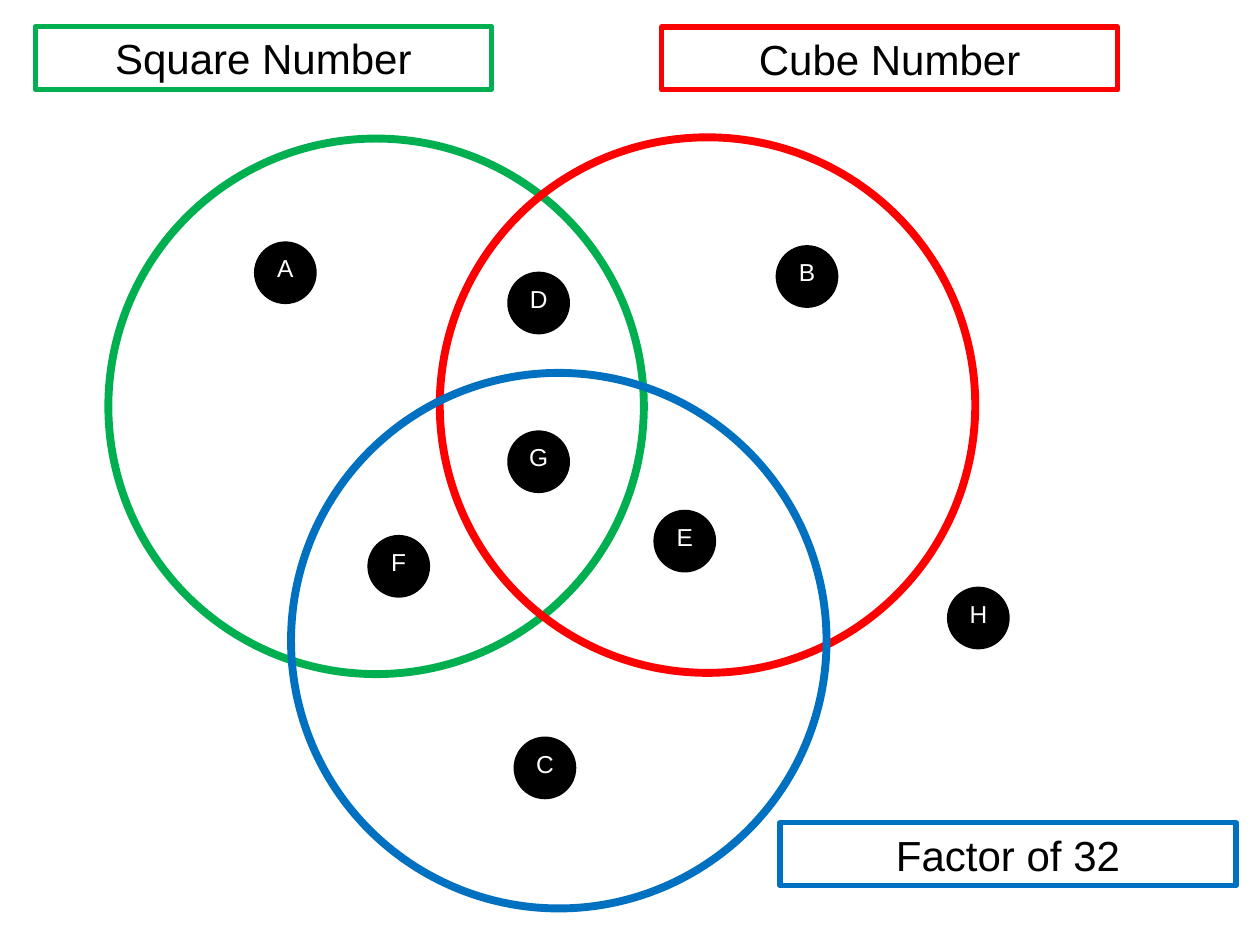
from dataclasses import dataclass

from pptx import Presentation
from pptx.dml.color import RGBColor
from pptx.enum.shapes import MSO_SHAPE
from pptx.enum.text import MSO_ANCHOR, MSO_AUTO_SIZE, PP_ALIGN
from pptx.shapes.autoshape import Shape
from pptx.shapes.shapetree import SlideShapes
from pptx.util import Pt

OVAL = MSO_SHAPE.OVAL
RECT = MSO_SHAPE.RECTANGLE
CENTER = PP_ALIGN.CENTER
TOP = MSO_ANCHOR.TOP
MIDDLE = MSO_ANCHOR.MIDDLE
GROW = MSO_AUTO_SIZE.SHAPE_TO_FIT_TEXT


@dataclass(frozen=True)
class Theme:
    font: str = "Arial"
    green: str = "00B050"
    red: str = "FF0000"
    blue: str = "0070C0"
    black: str = "000000"
    white: str = "FFFFFF"
    title: float = 24
    letter: float = 14


@dataclass(frozen=True)
class Group:
    """A circle of the diagram with its title box."""
    title: str
    color: str
    ring_x: float
    ring_y: float
    box_x: float
    box_y: float


@dataclass(frozen=True)
class Dot:
    """A lettered region marker."""
    letter: str
    x: float
    y: float


THEME = Theme()

# Sizes in points
RING = 306
BOX_W, BOX_H = 260.64, 36
DOT = 33.84
TAG_W, TAG_H = 26, 28.8
TAG_DX, TAG_DY = 3.92, 2.3

GROUPS = [
    Group("Square Number", THEME.green, 61.92, 79.2, 20.16, 15.12),
    Group("Cube Number", THEME.red, 251.28, 78.48, 378, 15.4),
    Group("Factor of 32", THEME.blue, 166.32, 213.12, 445.68, 470.16),
]
DOTS = [
    Dot("A", 146.16, 138.96),
    Dot("B", 444.24, 141.12),
    Dot("C", 294.48, 421.92),
    Dot("D", 290.88, 156.24),
    Dot("E", 374.4, 292.32),
    Dot("F", 210.96, 306.72),
    Dot("G", 290.88, 246.96),
    Dot("H", 542.16, 336.24),
]


def add_form(shapes: SlideShapes, kind: MSO_SHAPE, x: float, y: float,
             wide: float, high: float, line: str, weight: float,
             fill: str | None = None) -> Shape:
    form = shapes.add_shape(kind, Pt(x), Pt(y), Pt(wide), Pt(high))
    form.shadow.inherit = False
    form.line.color.rgb = RGBColor.from_string(line)
    form.line.width = Pt(weight)
    if fill is None:
        form.fill.background()
    else:
        form.fill.solid()
        form.fill.fore_color.rgb = RGBColor.from_string(fill)
    return form


def add_text(shape: Shape, text: str, size: float, color: str,
             anchor: MSO_ANCHOR) -> None:
    frame = shape.text_frame
    frame.word_wrap = True
    frame.auto_size = GROW
    frame.vertical_anchor = anchor
    para = frame.paragraphs[0]
    para.alignment = CENTER
    run = para.add_run()
    run.text = text
    run.font.name = THEME.font
    run.font.size = Pt(size)
    run.font.color.rgb = RGBColor.from_string(color)


def add_ring(shapes: SlideShapes, group: Group) -> None:
    add_form(shapes, OVAL, group.ring_x, group.ring_y, RING, RING,
             group.color, 4.5)


def add_dot(shapes: SlideShapes, dot: Dot) -> None:
    add_form(shapes, OVAL, dot.x, dot.y, DOT, DOT, THEME.black, 2, THEME.black)
    tag = shapes.add_textbox(Pt(dot.x + TAG_DX), Pt(dot.y + TAG_DY),
                             Pt(TAG_W), Pt(TAG_H))
    add_text(tag, dot.letter, THEME.letter, THEME.white, TOP)


def add_title(shapes: SlideShapes, group: Group) -> None:
    box = add_form(shapes, RECT, group.box_x, group.box_y, BOX_W, BOX_H,
                   group.color, 3)
    add_text(box, group.title, THEME.title, THEME.black, MIDDLE)


def main() -> None:
    deck = Presentation()
    deck.slide_width, deck.slide_height = Pt(720), Pt(540)
    shapes = deck.slides.add_slide(deck.slide_layouts[6]).shapes

    # Overlapping circles
    for group in GROUPS:
        add_ring(shapes, group)

    # Lettered regions
    for dot in DOTS:
        add_dot(shapes, dot)

    # Circle titles
    for group in GROUPS:
        add_title(shapes, group)

    deck.save("out.pptx")


if __name__ == "__main__":
    main()
